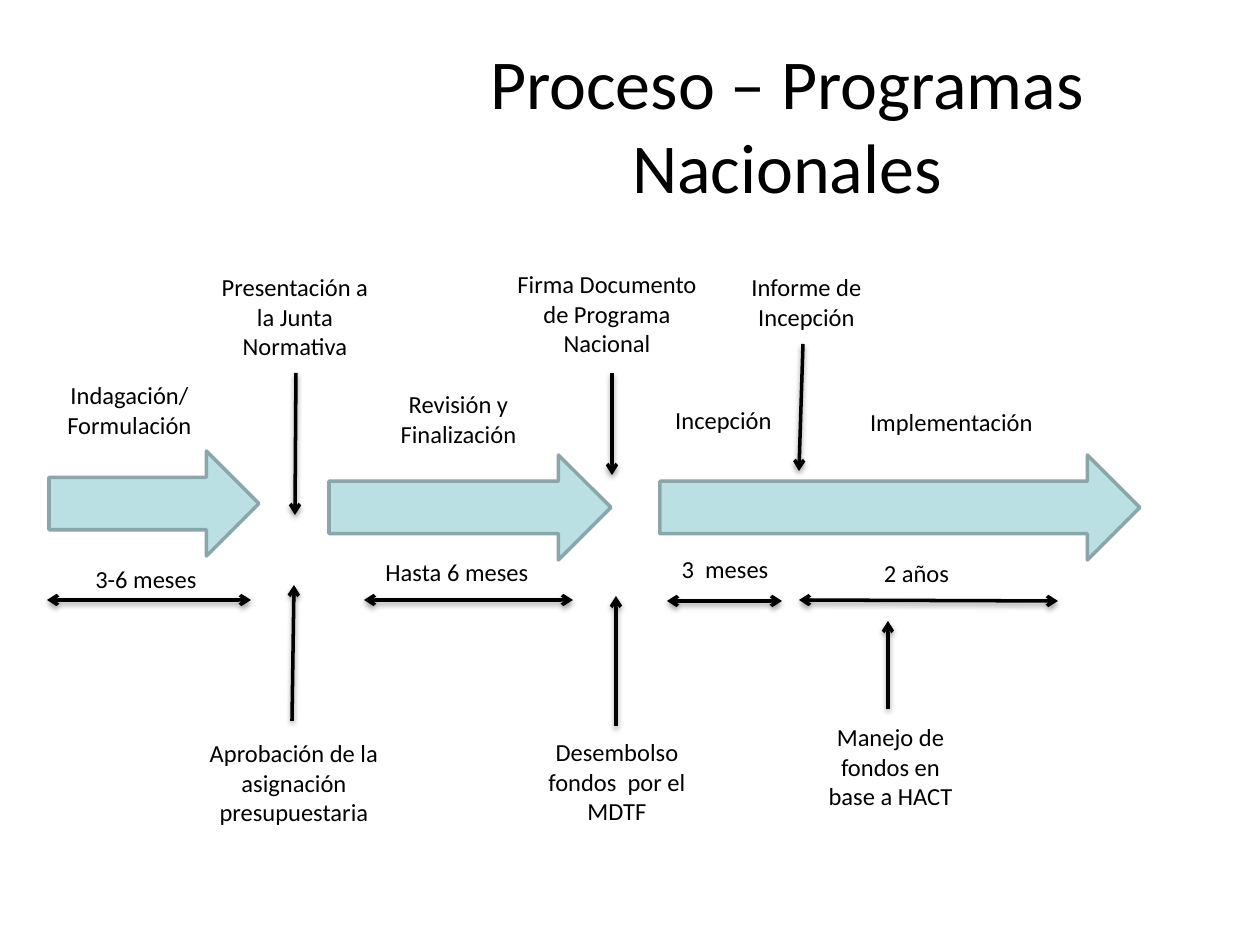
import pptx
import pptx.dml.color
import pptx.enum.shapes
import pptx.enum.text
import pptx.oxml
import pptx.oxml.ns
import pptx.util

RGBColor = pptx.dml.color.RGBColor
BLACK = RGBColor(0x00, 0x00, 0x00)
PALE_TEAL = RGBColor(0xBB, 0xE0, 0xE3)
GREY_TEAL = RGBColor(0x8A, 0xA6, 0xA8)

PX_PER_INCH = 126
FONT = "Calibri"
LINE_WIDTH = pptx.util.Pt(2)

# Places are left, top, width, height in px.
STAGE_ARROWS = [
    (49, 451, 210, 105),
    (329, 455, 282, 105),
    (660, 455, 480, 105),
]
LABELS = [
    ("Indagación/ Formulación", (30, 374, 199, 72)),
    ("Revisión y Finalización", (352, 383, 213, 72)),
    ("Incepción", (617, 399, 213, 43)),
    ("Implementación", (845, 401, 213, 43)),
    ("3-6 meses", (39, 558, 214, 43)),
    ("Hasta 6 meses", (362, 551, 190, 43)),
    ("3  meses", (641, 548, 168, 43)),
    ("2 años", (854, 552, 125, 43)),
    ("Presentación a la Junta Normativa", (200, 266, 190, 102)),
    ("Firma Documento de Programa Nacional", (496, 263, 222, 102)),
    ("Informe de Incepción", (733, 266, 147, 72)),
    ("Aprobación de la asignación presupuestaria", (194, 732, 200, 102)),
    ("Desembolso fondos  por el MDTF", (515, 731, 204, 102)),
    ("Manejo de fondos en base a HACT", (804, 716, 173, 102)),
]
# Lines are start x, start y, end x, end y in px.
MILESTONES = [
    (296, 373, 295, 515),
    (612, 373, 612, 475),
    (803, 344, 799, 471),
    (292, 721, 294, 585),
    (616, 726, 616, 596),
    (888, 709, 888, 621),
]
DURATIONS = [
    (47, 600, 251, 600),
    (364, 600, 573, 600),
    (667, 601, 782, 601),
    (799, 600, 1058, 601),
]
SHADOW_XML = (
    f'<a:effectLst {pptx.oxml.ns.nsdecls("a")}>'
    '<a:outerShdw blurRad="40000" dist="20000" dir="5400000" rotWithShape="0">'
    '<a:srgbClr val="000000"><a:alpha val="38000"/></a:srgbClr>'
    '</a:outerShdw></a:effectLst>'
)


def px(length):
    return pptx.util.Emu(round(length * pptx.util.Inches(1) / PX_PER_INCH))


def scaled(lengths):
    return [px(length) for length in lengths]


def set_attributes(target, values):
    for name, value in values.items():
        setattr(target, name, value)


def add_text(page, text, place, size, **frame_format):
    box = page.shapes.add_textbox(*scaled(place))
    frame = box.text_frame
    set_attributes(frame, {"word_wrap": True, **frame_format})
    para = frame.paragraphs[0]
    para.alignment = pptx.enum.text.PP_ALIGN.CENTER
    span = para.add_run()
    span.text = text
    set_attributes(span.font, {"name": FONT, "size": pptx.util.Pt(size)})
    span.font.color.rgb = BLACK


def add_stage_arrow(page, place):
    kind = pptx.enum.shapes.MSO_SHAPE.RIGHT_ARROW
    arrow = page.shapes.add_shape(kind, *scaled(place))
    arrow.shadow.inherit = False
    arrow.fill.solid()
    arrow.fill.fore_color.rgb = PALE_TEAL
    arrow.line.color.rgb = GREY_TEAL
    arrow.line.width = LINE_WIDTH


def add_line(page, ends, arrowheads):
    """Draw a shadowed line; arrowheads names headEnd (start), tailEnd (end)."""
    kind = pptx.enum.shapes.MSO_CONNECTOR.STRAIGHT
    line = page.shapes.add_connector(kind, *scaled(ends))
    line.line.color.rgb = BLACK
    line.line.width = LINE_WIDTH
    properties = line._element.spPr
    outline = properties.find(pptx.oxml.ns.qn("a:ln"))
    for tag in arrowheads:
        outline.append(pptx.oxml.parse_xml(
            f'<a:{tag} {pptx.oxml.ns.nsdecls("a")} type="arrow"/>'))
    properties.append(pptx.oxml.parse_xml(SHADOW_XML))


def main():
    deck = pptx.Presentation()
    deck.slide_width, deck.slide_height = scaled((1260, 945))
    page = deck.slides.add_slide(deck.slide_layouts[6])

    add_text(page, "Proceso – Programas Nacionales", (336, 18, 902, 210), 40,
             vertical_anchor=pptx.enum.text.MSO_ANCHOR.MIDDLE)
    for place in STAGE_ARROWS:
        add_stage_arrow(page, place)
    for text, place in LABELS:
        add_text(page, text, place, 14,
                 auto_size=pptx.enum.text.MSO_AUTO_SIZE.SHAPE_TO_FIT_TEXT)
    for ends in MILESTONES:
        add_line(page, ends, ["tailEnd"])
    for ends in DURATIONS:
        add_line(page, ends, ["headEnd", "tailEnd"])

    deck.save("out.pptx")


if __name__ == "__main__":
    main()
